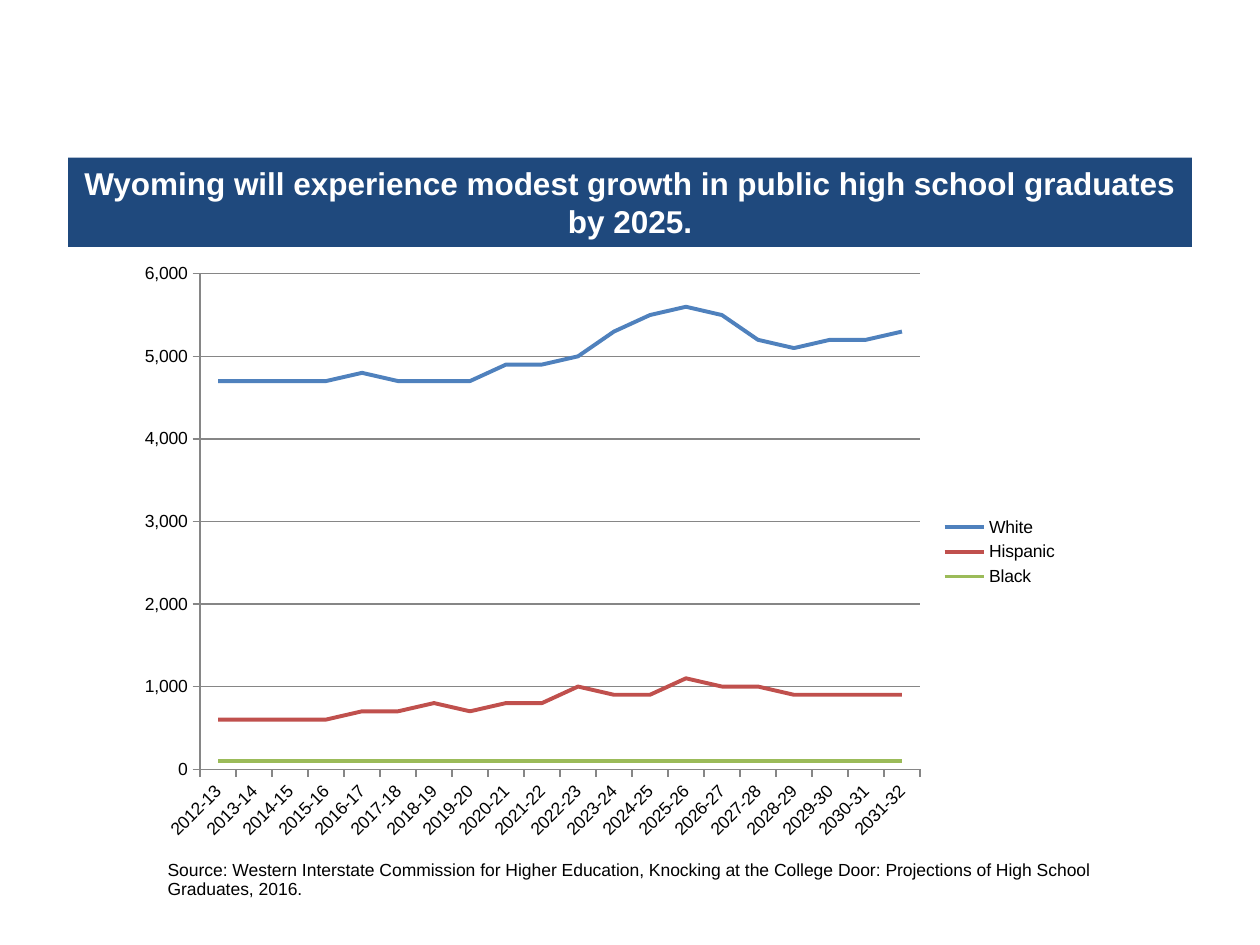
from pptx import Presentation
from pptx import util as u
from pptx.chart.data import CategoryChartData
from pptx.dml.color import RGBColor
from pptx.enum import chart as charts, shapes, text

COLORS = {
    "banner": "1F497D", "white": "FFFFFF", "black": "000000", "axis": "868686",
    "White": "4F81BD", "Hispanic": "C0504D", "Black": "9BBB59",
}
FONT = "Arial"


def color(name):
    return RGBColor.from_string(COLORS[name])


def style_font(font, size, name, bold=False):
    font.name, font.size, font.bold = FONT, u.Pt(size), bold
    font.color.rgb = color(name)


presentation = Presentation()
presentation.slide_width, presentation.slide_height = u.Inches(10), u.Inches(7.5)
slide = presentation.slides.add_slide(presentation.slide_layouts[6])

# Title banner
banner = slide.shapes.add_shape(
    shapes.MSO_SHAPE.RECTANGLE,
    u.Inches(0.54), u.Inches(1.25), u.Inches(8.92), u.Inches(0.71))
banner.shadow.inherit = False
banner.fill.solid()
banner.fill.fore_color.rgb = color("banner")
banner.line.fill.background()
banner.text_frame.word_wrap = True
banner.text_frame.vertical_anchor = text.MSO_ANCHOR.MIDDLE
paragraph = banner.text_frame.paragraphs[0]
paragraph.alignment = text.PP_ALIGN.CENTER
run = paragraph.add_run()
run.text = "Wyoming will experience modest growth in public high school graduates by 2025."
style_font(run.font, 18, "white", bold=True)

# Source note in a one-cell table
table = slide.shapes.add_table(
    1, 1, u.Inches(1.33), u.Inches(6.83), u.Inches(7.42), u.Inches(0.33)).table
table.first_row = table.horz_banding = False
cell = table.cell(0, 0)
cell.fill.background()
cell.margin_left = cell.margin_right = cell.margin_top = cell.margin_bottom = 0
run = cell.text_frame.paragraphs[0].add_run()
run.text = ("Source: Western Interstate Commission for Higher Education, Knocking at the "
            "College Door: Projections of High School Graduates, 2016.")
style_font(run.font, 10, "black")

# Graduates by school year
graduates = {
    "White": [4700, 4700, 4700, 4700, 4800, 4700, 4700, 4700, 4900, 4900,
              5000, 5300, 5500, 5600, 5500, 5200, 5100, 5200, 5200, 5300],
    "Hispanic": [600, 600, 600, 600, 700, 700, 800, 700, 800, 800,
                 1000, 900, 900, 1100, 1000, 1000, 900, 900, 900, 900],
    "Black": [100] * 20,
}
data = CategoryChartData(number_format="#,##0")
data.categories = [f"{year}-{year % 100 + 1}" for year in range(2012, 2032)]
for name, values in graduates.items():
    data.add_series(name, values)
chart = slide.shapes.add_chart(
    charts.XL_CHART_TYPE.LINE,
    u.Inches(1), u.Inches(2), u.Inches(7.5), u.Inches(4.76), data).chart
chart.has_title = False
style_font(chart.font, 10, "black")
chart.has_legend = True
chart.legend.position = charts.XL_LEGEND_POSITION.RIGHT
chart.legend.include_in_layout = False

# Series lines
chart.plots[0].vary_by_categories = False
for series in chart.plots[0].series:
    series.smooth = False
    series.marker.style = charts.XL_MARKER_STYLE.NONE
    series.format.line.width = u.Pt(2.25)
    series.format.line.color.rgb = color(series.name)

# Axes
value_axis, category_axis = chart.value_axis, chart.category_axis
value_axis.minimum_scale, value_axis.maximum_scale = 0, 6000
value_axis.major_unit = 1000
value_axis.has_major_gridlines = True
value_axis.tick_labels.number_format = "#,##0"
value_axis.tick_labels.number_format_is_linked = False
for axis in (value_axis, category_axis):
    axis.major_tick_mark = charts.XL_TICK_MARK.OUTSIDE
    axis.minor_tick_mark = charts.XL_TICK_MARK.NONE
    style_font(axis.tick_labels.font, 10, "black")
for line in (value_axis.format.line, category_axis.format.line,
             value_axis.major_gridlines.format.line):
    line.color.rgb = color("axis")
    line.width = u.Pt(0.75)

presentation.save("out.pptx")
